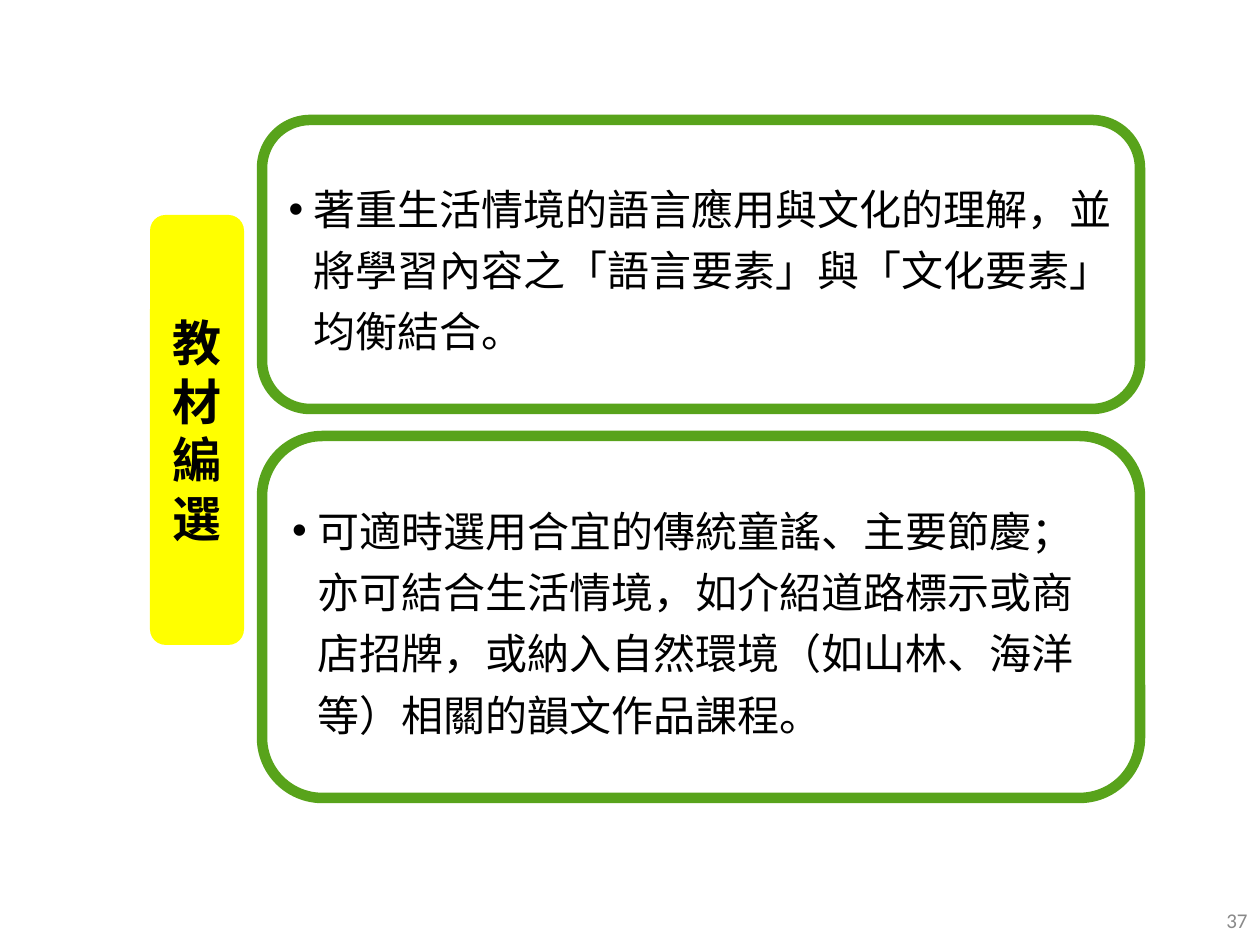
from lxml.etree import SubElement
from pptx import Presentation
from pptx.dml.color import RGBColor
from pptx.enum.shapes import MSO_SHAPE
from pptx.enum.text import MSO_ANCHOR, PP_ALIGN
from pptx.oxml.ns import qn
from pptx.util import Emu, Pt

CJK = "Noto Sans CJK SC"
LEFT, WIDTH = 262, 878
PANELS = [
    (120, 289, "著重生活情境的語言應用與文化的理解，並將學習內容之「語言要素」與「文化要素」均衡結合。"),
    (436, 362, "可適時選用合宜的傳統童謠、主要節慶；亦可結合生活情境，如介紹道路標示或商店招牌，"
               "或納入自然環境（如山林、海洋等）相關的韻文作品課程。"),
]


def px(n):
    return Emu(round(n * 914400 / 126))


def color(value):
    return RGBColor.from_string(value)


def add_run(p, text, size, font=CJK, fill="000000", bold=False):
    r = p.add_run()
    r.text = text
    r.font.size = Pt(size)
    r.font.bold = bold
    r.font.color.rgb = color(fill)
    r.font.name = font
    SubElement(r.font._element, qn("a:ea"), typeface=font)


def add_bullet(p, indent):
    pPr = p._p.get_or_add_pPr()
    pPr.set("marL", str(indent))
    pPr.set("indent", str(-indent))
    SubElement(pPr, qn("a:buFont"), typeface="Arial")
    SubElement(pPr, qn("a:buChar"), char="•")


def add_box(s, x, y, w, h, fill, line=None):
    sp = s.shapes.add_shape(MSO_SHAPE.FLOWCHART_ALTERNATE_PROCESS,
                            px(x), px(y), px(w), px(h))
    sp.shadow.inherit = False
    sp.fill.solid()
    sp.fill.fore_color.rgb = color(fill)
    if line:
        sp.line.color.rgb = color(line)
        sp.line.width = Pt(6)
    else:
        sp.line.fill.background()
    tf = sp.text_frame
    tf.word_wrap = True
    tf.vertical_anchor = MSO_ANCHOR.MIDDLE
    return tf


def add_panel(s, y, h, text):
    tf = add_box(s, LEFT, y, WIDTH, h, "FFFFFF", "58A31B")
    tf.margin_right = px(10)  # room for a full line of characters
    p = tf.paragraphs[0]
    p.alignment = PP_ALIGN.LEFT
    p.line_spacing = Pt(35)
    add_bullet(p, px(25))
    add_run(p, text, 24)


def add_label(s, text):
    tf = add_box(s, 150, 215, 94, 430, "FFFF00")
    # One character per line
    for i, char in enumerate(text):
        p = tf.add_paragraph() if i else tf.paragraphs[0]
        p.alignment = PP_ALIGN.CENTER
        p.line_spacing = Pt(33.5)
        add_run(p, char, 28, bold=True)


def add_page_number(s, number):
    tf = s.shapes.add_textbox(px(976), px(895), px(284), px(50)).text_frame
    tf.word_wrap = True
    tf.vertical_anchor = MSO_ANCHOR.MIDDLE
    p = tf.paragraphs[0]
    p.alignment = PP_ALIGN.RIGHT
    add_run(p, number, 12, "Calibri", "898989")


def main():
    prs = Presentation()
    prs.slide_width, prs.slide_height = px(1260), px(945)
    s = prs.slides.add_slide(prs.slide_layouts[6])

    # Bordered panels with the guidance
    for y, h, text in PANELS:
        add_panel(s, y, h, text)

    # Vertical topic label and page number
    add_label(s, "教材編選")
    add_page_number(s, "37")
    prs.save("out.pptx")


if __name__ == "__main__":
    main()
